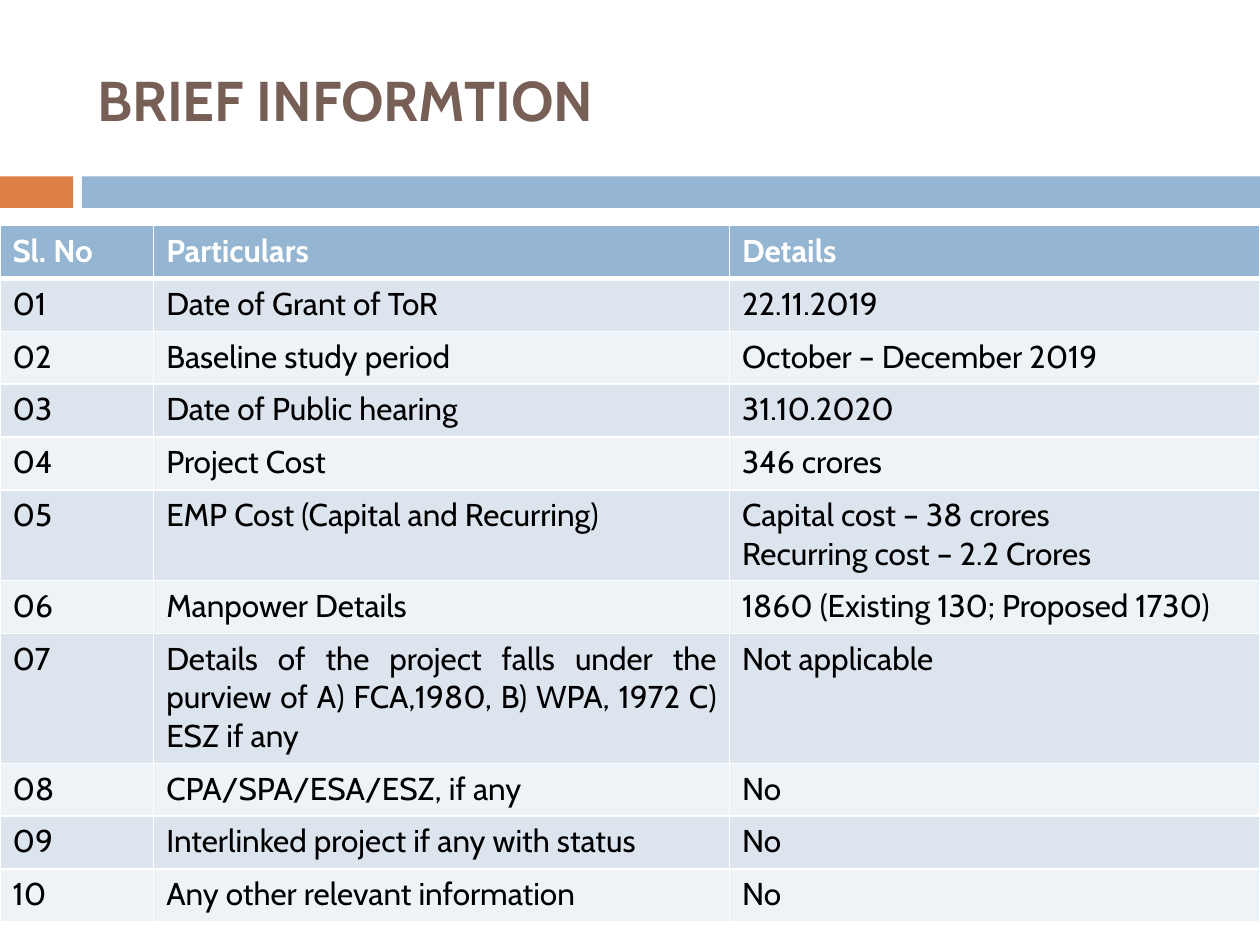
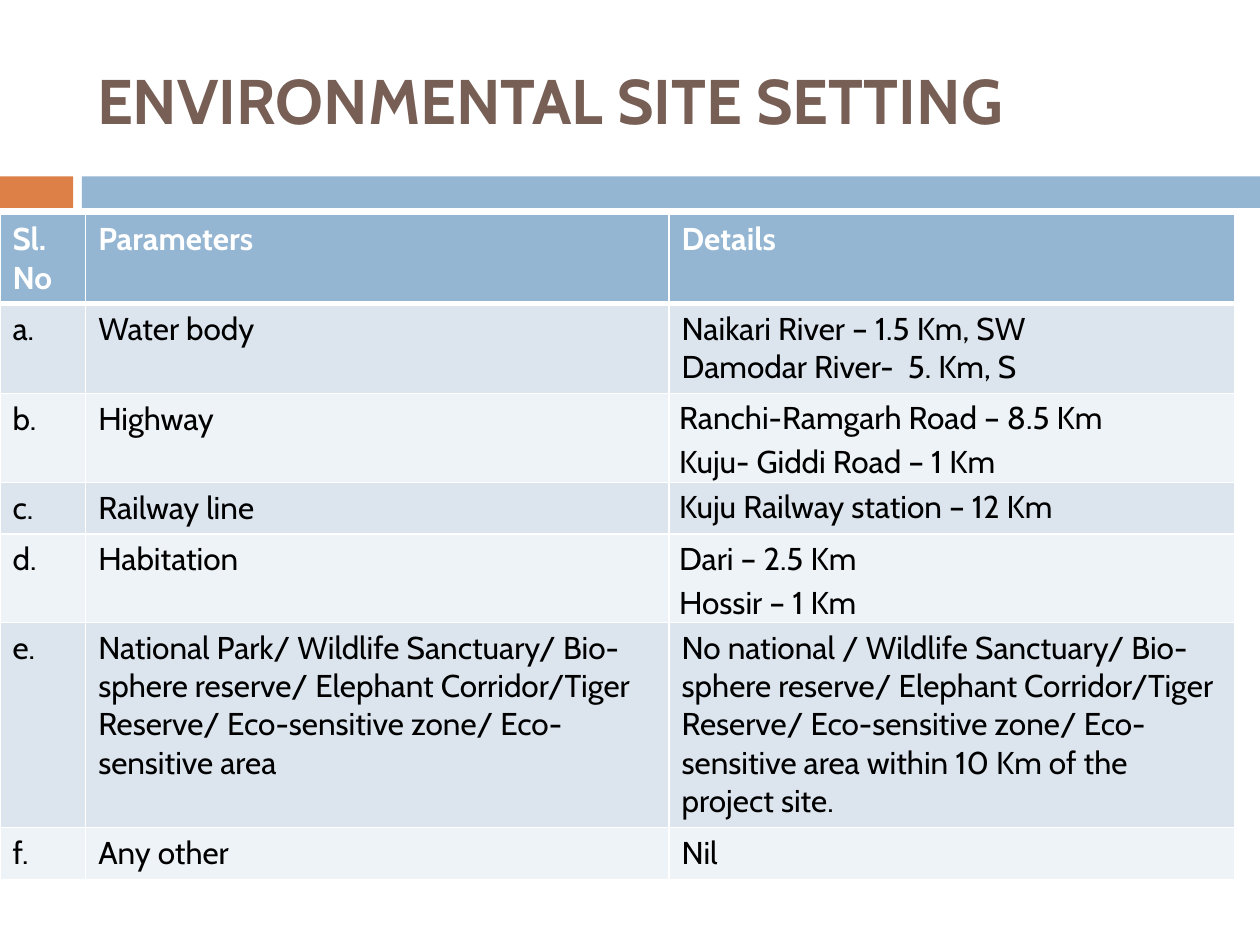
import pptx
import pptx.util
import pptx.dml.color
import pptx.enum.shapes
import pptx.enum.text
import pptx.oxml
import pptx.oxml.ns

Inches = pptx.util.Inches
Pt = pptx.util.Pt

FONT = "Cabin"
TABLE_SIZE = 18
COLORS = {
    "title": "775F55",
    "accent": "DD8047",
    "header": "94B6D2",
    "odd_row": "DCE5EE",
    "even_row": "EEF3F7",
    "text": "000000",
    "white": "FFFFFF",
}

BRIEF_ROWS = [
    ("Sl. No", "Particulars", "Details"),
    ("01", "Date of Grant of ToR", "22.11.2019"),
    ("02", "Baseline study period", "October – December 2019"),
    ("03", "Date of Public hearing", "31.10.2020"),
    ("04", "Project Cost", "346 crores"),
    ("05", "EMP Cost (Capital and Recurring)",
     "Capital cost – 38 crores\nRecurring cost – 2.2 Crores"),
    ("06", "Manpower Details", "1860 (Existing 130; Proposed 1730)"),
    ("07", "Details of the project falls under the purview of "
           "A) FCA,1980, B) WPA, 1972 C) ESZ if any", "Not applicable"),
    ("08", "CPA/SPA/ESA/ESZ, if any", "No"),
    ("09", "Interlinked project if any with status", "No"),
    ("10", "Any other relevant information", "No"),
]
BRIEF_HEIGHTS = [0.42] * 5 + [0.72, 0.42, 1.03] + [0.42] * 3

PROTECTED_AREAS = ("Wildlife Sanctuary/ Bio-sphere reserve/ Elephant Corridor/"
                   "Tiger Reserve/ Eco-sensitive zone/ Eco-sensitive area")
SITE_ROWS = [
    ("Sl. No", "Parameters", "Details"),
    ("a.", "Water body", "Naikari River – 1.5 Km, SW\nDamodar River-  5. Km, S"),
    ("b.", "Highway", "Ranchi-Ramgarh Road – 8.5 Km\nKuju- Giddi Road – 1 Km"),
    ("c.", "Railway line", "Kuju Railway station – 12 Km"),
    ("d.", "Habitation", "Dari – 2.5 Km\nHossir – 1 Km"),
    ("e.", f"National Park/ {PROTECTED_AREAS}",
     f"No national / {PROTECTED_AREAS} within 10 Km of the project site."),
    ("f.", "Any other", "Nil"),
]
SITE_HEIGHTS = [0.7, 0.71, 0.71, 0.4, 0.7, 1.63, 0.41]


def rgb(name):
    return pptx.dml.color.RGBColor.from_string(COLORS[name])


def format_text(frame, size, color, bold):
    for para in frame.paragraphs:
        for span in para.runs:
            span.font.name = FONT
            span.font.size = Pt(size)
            span.font.bold = bold
            span.font.color.rgb = rgb(color)


def add_band(page, left, width, color):
    band = page.shapes.add_shape(
        pptx.enum.shapes.MSO_SHAPE.RECTANGLE,
        Inches(left), Inches(1.4), Inches(width), Inches(0.25))
    band.shadow.inherit = False
    band.fill.solid()
    band.fill.fore_color.rgb = rgb(color)
    band.line.fill.background()


def add_page(deck, title, title_size):
    """Add a slide with the shared title style and the two bands below it."""
    page = deck.slides.add_slide(deck.slide_layouts[5])
    add_band(page, 0, 0.58, "accent")
    add_band(page, 0.65, 9.35, "header")
    box = page.shapes.title
    box.left, box.top = Inches(0.67), Inches(0.25)
    box.width, box.height = Inches(8.92), Inches(1.08)
    frame = box.text_frame
    frame.text = title
    frame.vertical_anchor = pptx.enum.text.MSO_ANCHOR.MIDDLE
    frame.paragraphs[0].alignment = pptx.enum.text.PP_ALIGN.LEFT
    format_text(frame, title_size, "title", True)
    return page


def set_borders(cell, top, bottom):
    """Give a cell white borders; top and bottom are widths in points."""
    properties = cell._tc.get_or_add_tcPr()
    widths = {"lnL": 1, "lnR": 1, "lnT": top, "lnB": bottom}
    for position, (tag, width) in enumerate(widths.items()):
        line = pptx.oxml.parse_xml(
            f'<a:{tag} {pptx.oxml.ns.nsdecls("a")} w="{Pt(width)}">'
            f'<a:solidFill><a:srgbClr val="{COLORS["white"]}"/></a:solidFill>'
            f'</a:{tag}>')
        properties.insert(position, line)


def fill_cell(cell, text, row):
    is_header = row == 0
    cell.text = text
    format_text(cell.text_frame, TABLE_SIZE,
                "white" if is_header else "text", is_header)
    cell.fill.solid()
    stripe = "odd_row" if row % 2 else "even_row"
    cell.fill.fore_color.rgb = rgb("header" if is_header else stripe)
    set_borders(cell, top=3 if row == 1 else 1, bottom=3 if is_header else 1)


def add_table(page, top, widths, heights, rows):
    table = page.shapes.add_table(
        len(rows), len(widths), Inches(0), Inches(top),
        Inches(sum(widths)), Inches(sum(heights))).table
    for column, width in zip(table.columns, widths):
        column.width = Inches(width)
    for table_row, height in zip(table.rows, heights):
        table_row.height = Inches(height)
    for row, texts in enumerate(rows):
        for column, text in enumerate(texts):
            fill_cell(table.cell(row, column), text, row)
    return table


def loosen_cell(cell):
    """Widen the line spacing and drop the vertical margins."""
    cell.margin_left = cell.margin_right = Inches(0.08)
    cell.margin_top = cell.margin_bottom = 0
    for para in cell.text_frame.paragraphs:
        para.line_spacing = 1.15


def main():
    deck = pptx.Presentation()
    deck.slide_width, deck.slide_height = Inches(10), Inches(7.5)

    page = add_page(deck, "BRIEF INFORMTION", 32)
    brief = add_table(page, 1.79, [1.22, 4.57, 4.21], BRIEF_HEIGHTS, BRIEF_ROWS)
    purview = brief.cell(7, 1).text_frame.paragraphs[0]
    purview.alignment = pptx.enum.text.PP_ALIGN.JUSTIFY

    page = add_page(deck, "ENVIRONMENTAL SITE SETTING", 36)
    site = add_table(page, 1.7, [0.68, 4.63, 4.49], SITE_HEIGHTS, SITE_ROWS)
    for row in (2, 3, 4):
        loosen_cell(site.cell(row, 2))

    deck.save("out.pptx")


if __name__ == "__main__":
    main()
